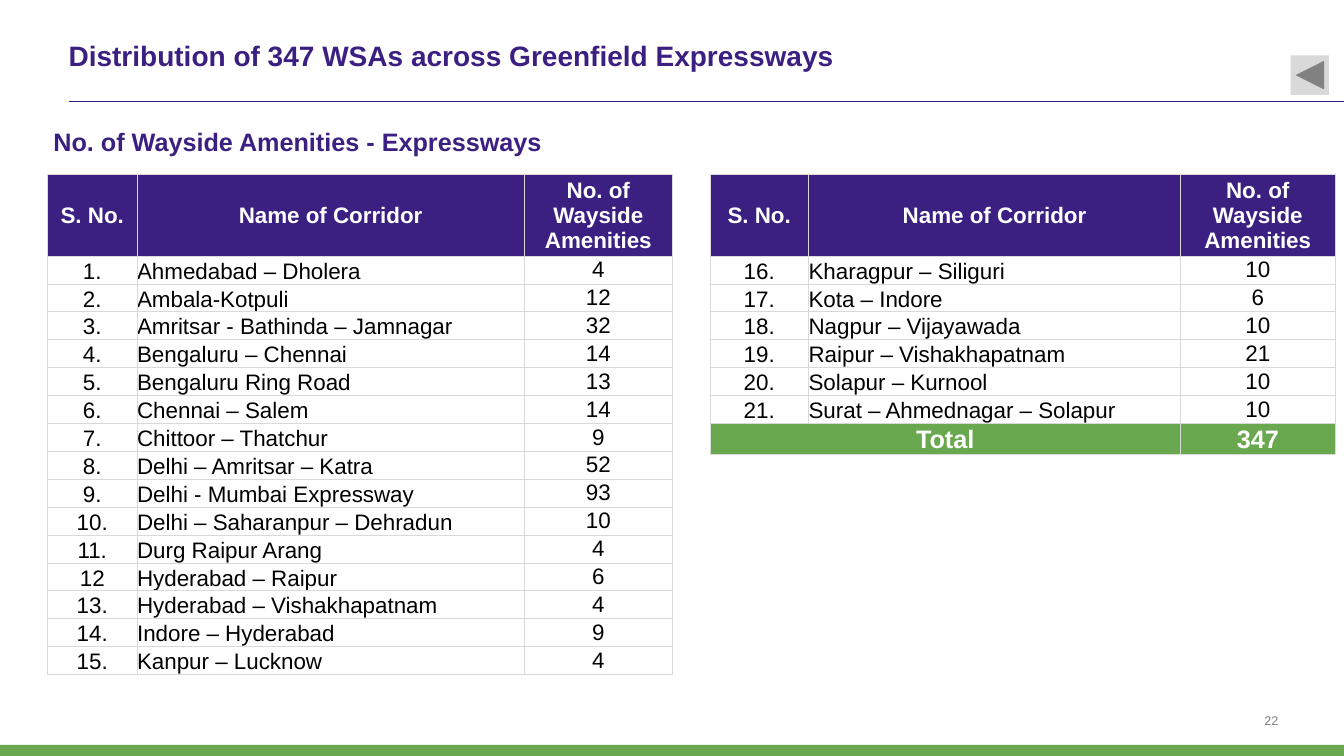
from typing import NamedTuple

from lxml import etree
from pptx import Presentation
from pptx.dml.color import RGBColor
from pptx.enum.shapes import MSO_CONNECTOR, MSO_SHAPE
from pptx.enum.text import MSO_ANCHOR as Anchor, PP_ALIGN as Align
from pptx.oxml.ns import qn
from pptx.util import Inches, Pt

PURPLE, GREEN, WHITE, BLACK = "3B2082", "6AA84F", "FFFFFF", "000000"
LIGHT_GREY, MID_GREY = "D9D9D9", "808080"
HEADINGS = ("S. No.", "Name of Corridor", "No. of Wayside Amenities")
TABLE_TOP, ROW_HEIGHT = 1.73, 0.21


class Corridor(NamedTuple):
    serial: str
    name: str
    amenities: int


class CorridorTable(NamedTuple):
    left: float
    widths: tuple[float, ...]
    header_height: float
    corridors: list[Corridor]
    total: int | None = None


class Label(NamedTuple):
    text: str
    box: tuple[float, float, float, float]
    size: int
    color: str
    bold: bool = True
    align: Align = Align.LEFT
    anchor: Anchor = Anchor.TOP
    inset: float = 0


FIRST_CORRIDORS = [
    Corridor("1.", "Ahmedabad – Dholera", 4),
    Corridor("2.", "Ambala-Kotpuli", 12),
    Corridor("3.", "Amritsar - Bathinda – Jamnagar", 32),
    Corridor("4.", "Bengaluru – Chennai", 14),
    Corridor("5.", "Bengaluru Ring Road", 13),
    Corridor("6.", "Chennai – Salem", 14),
    Corridor("7.", "Chittoor – Thatchur", 9),
    Corridor("8.", "Delhi – Amritsar – Katra", 52),
    Corridor("9.", "Delhi - Mumbai Expressway", 93),
    Corridor("10.", "Delhi – Saharanpur – Dehradun", 10),
    Corridor("11.", "Durg Raipur Arang", 4),
    Corridor("12", "Hyderabad – Raipur", 6),
    Corridor("13.", "Hyderabad – Vishakhapatnam", 4),
    Corridor("14.", "Indore – Hyderabad", 9),
    Corridor("15.", "Kanpur – Lucknow", 4),
]
LAST_CORRIDORS = [
    Corridor("16.", "Kharagpur – Siliguri", 10),
    Corridor("17.", "Kota – Indore", 6),
    Corridor("18.", "Nagpur – Vijayawada", 10),
    Corridor("19.", "Raipur – Vishakhapatnam", 21),
    Corridor("20.", "Solapur – Kurnool", 10),
    Corridor("21.", "Surat – Ahmednagar – Solapur", 10),
]
TABLES = [
    CorridorTable(0.47, (0.89, 3.84, 1.47), 0.46, FIRST_CORRIDORS),
    CorridorTable(7.04, (0.98, 3.69, 1.53), 0.8, LAST_CORRIDORS, total=347),
]
LABELS = [
    Label("Distribution of 347 WSAs across Greenfield Expressways",
          (0.68, 0.12, 12.12, 0.86), 20, PURPLE, anchor=Anchor.MIDDLE),
    Label("No. of Wayside Amenities - Expressways",
          (0.47, 1.19, 6.96, 0.38), 18, PURPLE, inset=0.06),
    Label("22", (11.54, 7.03, 1.14, 0.19), 9, MID_GREY, bold=False,
          align=Align.RIGHT, anchor=Anchor.BOTTOM),
]


def rgb(color: str) -> RGBColor:
    return RGBColor.from_string(color)


def write(frame, text: str, size: int, color: str, bold: bool, align: Align) -> None:
    para = frame.paragraphs[0]
    para.alignment = align
    run = para.add_run()
    run.text = text
    run.font.name = "Arial"
    run.font.size = Pt(size)
    run.font.bold = bold
    run.font.color.rgb = rgb(color)


def set_margins(target, left: float, top: float, right: float, bottom: float) -> None:
    target.margin_left, target.margin_top = Inches(left), Inches(top)
    target.margin_right, target.margin_bottom = Inches(right), Inches(bottom)


def add_label(page, label: Label) -> None:
    frame = page.shapes.add_textbox(*map(Inches, label.box)).text_frame
    frame.word_wrap = True
    frame.vertical_anchor = label.anchor
    set_margins(frame, *[label.inset] * 4)
    write(frame, label.text, label.size, label.color, label.bold, label.align)


def add_plain_shape(page, kind: MSO_SHAPE, box: tuple[float, ...], color: str):
    shape = page.shapes.add_shape(kind, *map(Inches, box))
    shape.shadow.inherit = False
    shape.fill.solid()
    shape.fill.fore_color.rgb = rgb(color)
    shape.line.fill.background()
    return shape


def add_title_rule(page) -> None:
    rule = page.shapes.add_connector(
        MSO_CONNECTOR.STRAIGHT, Inches(0.68), Inches(1.01), Inches(13.33), Inches(1.01))
    rule.line.color.rgb = rgb(PURPLE)
    rule.line.width = Pt(1)
    etree.SubElement(rule.line._get_or_add_ln().getparent(), qn("a:effectLst"))


def add_borders(cell) -> None:
    properties = cell._tc.get_or_add_tcPr()
    for side in ("lnL", "lnR", "lnT", "lnB"):
        line = etree.SubElement(properties, qn(f"a:{side}"), w=str(Pt(0.5)))
        fill = etree.SubElement(line, qn("a:solidFill"))
        etree.SubElement(fill, qn("a:srgbClr"), val=LIGHT_GREY)


def style_cell(cell, fill: str | None, anchor: Anchor, tight: bool = False) -> None:
    """Set borders, fill and placing; a tight cell has no margins."""
    add_borders(cell)
    if fill:
        cell.fill.solid()
        cell.fill.fore_color.rgb = rgb(fill)
    else:
        cell.fill.background()
    cell.vertical_anchor = anchor
    edge = 0 if tight else 0.01
    set_margins(cell, edge, edge, edge, 0)


def add_corridor_table(page, spec_table: CorridorTable) -> None:
    has_total = spec_table.total is not None
    body_rows = len(spec_table.corridors) + has_total
    table = page.shapes.add_table(
        body_rows + 1, len(HEADINGS), Inches(spec_table.left), Inches(TABLE_TOP),
        Inches(sum(spec_table.widths)),
        Inches(spec_table.header_height + body_rows * ROW_HEIGHT)).table
    table.horz_banding = False
    for column, width in zip(table.columns, spec_table.widths):
        column.width = Inches(width)
    for index, row in enumerate(table.rows):
        row.height = Inches(ROW_HEIGHT if index else spec_table.header_height)

    for column, heading in enumerate(HEADINGS):
        cell = table.cell(0, column)
        style_cell(cell, PURPLE, Anchor.MIDDLE)
        write(cell.text_frame, heading, 16, WHITE, True, Align.CENTER)

    for row, corridor in enumerate(spec_table.corridors, start=1):
        for column, value in enumerate(corridor):
            cell = table.cell(row, column)
            style_cell(cell, None, Anchor.MIDDLE if column == 2 else Anchor.BOTTOM,
                       tight=column > 0)
            write(cell.text_frame, str(value), 16, BLACK, False,
                  Align.LEFT if column == 1 else Align.CENTER)

    if has_total:
        for column in range(len(HEADINGS)):
            style_cell(table.cell(body_rows, column), GREEN, Anchor.MIDDLE)
        table.cell(body_rows, 0).merge(table.cell(body_rows, 1))
        for column, text in ((0, "Total"), (2, str(spec_table.total))):
            write(table.cell(body_rows, column).text_frame, text, 18, WHITE, True,
                  Align.CENTER)


def main() -> None:
    deck = Presentation()
    deck.slide_width, deck.slide_height = Inches(13.33), Inches(7.5)
    page = deck.slides.add_slide(deck.slide_layouts[6])
    add_title_rule(page)
    add_plain_shape(page, MSO_SHAPE.RECTANGLE, (0, 7.39, 13.33, 0.11), GREEN)
    for label in LABELS:
        add_label(page, label)
    for corridor_table in TABLES:
        add_corridor_table(page, corridor_table)
    back_button = add_plain_shape(
        page, MSO_SHAPE.ACTION_BUTTON_FORWARD_OR_NEXT, (12.8, 0.55, 0.38, 0.39), LIGHT_GREY)
    back_button.rotation = 180
    deck.save("out.pptx")


if __name__ == "__main__":
    main()
